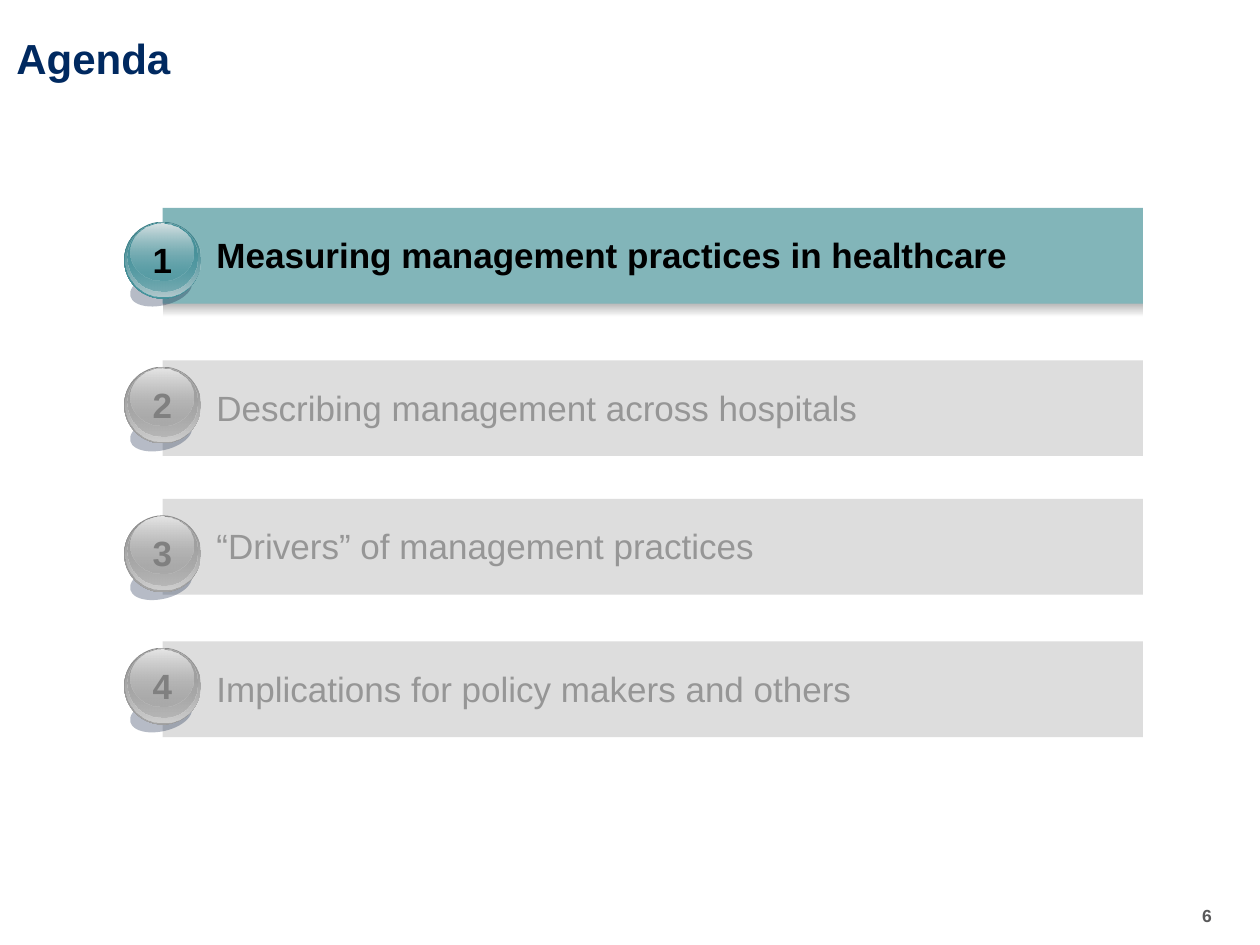
import pptx
import pptx.dml.color
import pptx.enum.shapes
import pptx.enum.text
import pptx.oxml
import pptx.oxml.ns
import pptx.util

WIDTH, HEIGHT = 10, 7.5
FONT = "Arial"
BAR_LEFT, BAR_WIDTH, BAR_HEIGHT = 1.29, 7.78, 0.76
BALL_LEFT, BALL_SIZE = 0.985, 0.61
RECTANGLE = pptx.enum.shapes.MSO_SHAPE.RECTANGLE
OVAL = pptx.enum.shapes.MSO_SHAPE.OVAL

# Each gloss layer: its box as shares of the ball
GLOSS_BOXES = [
    (0, 0, 1, 1),
    (0.02, 0, 0.97, 0.97),
    (0.04, 0.01, 0.92, 0.9),
    (0.08, 0.02, 0.82, 0.74),
]
# Each gloss layer: its two stops, as colour and opacity in percent
TEAL_GLOSS = [
    [("3E7F87", 100), ("48959E", 100)],
    [("48959E", 0), ("B1C8CC", 100)],
    [("47929B", 100), ("48959E", 48)],
    [("D6E1E3", 100), ("48959E", 38)],
]
GREY_GLOSS = [
    [("8C8C8C", 100), ("A4A4A4", 100)],
    [("A4A4A4", 0), ("CECECE", 100)],
    [("A1A1A1", 100), ("A4A4A4", 48)],
    [("E5E5E5", 100), ("A4A4A4", 38)],
]
ACTIVE = {"bar": "82B5B9", "label": "000000", "number": "000000",
          "bold": True, "gloss": TEAL_GLOSS}
MUTED = {"bar": "DDDDDD", "label": "969696", "number": "808080",
         "bold": False, "gloss": GREY_GLOSS}

# Bar top, ball top, label, style
AGENDA = [
    (1.65, 1.76, "Measuring management practices in healthcare", ACTIVE),
    (2.86, 2.91, "Describing management across hospitals", MUTED),
    (3.96, 4.09, "“Drivers” of management practices", MUTED),
    (5.09, 5.14, "Implications for policy makers and others", MUTED),
]


def rgb(code):
    return pptx.dml.color.RGBColor.from_string(code)


def emu(box):
    return [pptx.util.Inches(length) for length in box]


def within(box, shares):
    """Turn shares of a box into a box on the slide."""
    left, top, width, height = box
    x, y, w, h = shares
    return left + x * width, top + y * height, w * width, h * height


def set_opacity(parent, percent):
    """Give the one colour inside an XML element an opacity."""
    if percent < 100:
        color = parent.find(".//" + pptx.oxml.ns.qn("a:srgbClr"))
        color.append(pptx.oxml.parse_xml(
            f'<a:alpha {pptx.oxml.ns.nsdecls("a")} val="{percent * 1000}"/>'))


def add_plain(shapes, kind, box, color=None, opacity=100):
    shape = shapes.add_shape(kind, *emu(box))
    shape.shadow.inherit = False
    shape.line.fill.background()
    if color:
        shape.fill.solid()
        shape.fill.fore_color.rgb = rgb(color)
        set_opacity(shape.fill._xPr, opacity)
    else:
        shape.fill.background()
    return shape


def add_gradient(shapes, kind, box, stops):
    """Add a shape shaded from top to bottom."""
    shape = add_plain(shapes, kind, box)
    shape.fill.gradient()
    shape.fill.gradient_angle = 270
    for stop, (color, opacity) in zip(shape.fill.gradient_stops, stops):
        stop.color.rgb = rgb(color)
        set_opacity(stop._gs, opacity)


def write(shape, text, size, color, bold, inset=0, wrap=True):
    frame = shape.text_frame
    frame.margin_left = frame.margin_right = pptx.util.Inches(inset)
    frame.margin_top = frame.margin_bottom = pptx.util.Inches(inset)
    frame.word_wrap = wrap
    paragraph = frame.paragraphs[0]
    paragraph.text = text
    font = paragraph.font
    font.name, font.size, font.bold = FONT, pptx.util.Pt(size), bold
    font.color.rgb = rgb(color)
    return paragraph


def add_bar(shapes, box, label, style):
    if style is ACTIVE:
        add_gradient(shapes, RECTANGLE, within(box, (0, 0.96, 1, 0.18)),
                     [("A4A4A4", 100), ("FFFFFF", 100)])
    add_plain(shapes, RECTANGLE, box, style["bar"])
    label_box = within(box, (0.055, 0.27, 0.91, 0.45))
    write(shapes.add_textbox(*emu(label_box)), label, 20,
          style["label"], style["bold"])


def add_ball(shapes, box, number, style):
    shadow = add_plain(shapes, OVAL, within(box, (0.07, 0.66, 0.82, 0.43)),
                       "0F2145", 30)
    shadow.rotation = 347.1
    for shares, stops in zip(GLOSS_BOXES, style["gloss"]):
        add_gradient(shapes, OVAL, within(box, shares), stops)
    face = add_plain(shapes, OVAL, within(box, (0.32, 0.31, 0.36, 0.36)))
    paragraph = write(face, str(number), 20, style["number"], True, 0.08, False)
    paragraph.alignment = pptx.enum.text.PP_ALIGN.CENTER
    face.text_frame.vertical_anchor = pptx.enum.text.MSO_ANCHOR.MIDDLE


def add_agenda(slide):
    for number, (bar_top, ball_top, label, style) in enumerate(AGENDA, 1):
        shapes = slide.shapes.add_group_shape().shapes
        add_bar(shapes, (BAR_LEFT, bar_top, BAR_WIDTH, BAR_HEIGHT), label, style)
        add_ball(shapes, (BALL_LEFT, ball_top, BALL_SIZE, BALL_SIZE), number, style)


def add_title(slide, box):
    write(slide.shapes.add_textbox(*emu(box)), "Agenda", 24, "002960", True)


def add_page_number(slide, box):
    write(slide.shapes.add_textbox(*emu(box)), "6", 10, "59595A", True, wrap=False)


def main():
    deck = pptx.Presentation()
    deck.slide_width, deck.slide_height = emu((WIDTH, HEIGHT))
    slide = deck.slides.add_slide(deck.slide_layouts[6])
    add_page_number(slide, (9.54, 7.18, 0.22, 0.17))
    add_title(slide, (0.13, 0.26, 9.62, 0.41))
    add_agenda(slide)
    deck.save("out.pptx")


if __name__ == "__main__":
    main()
